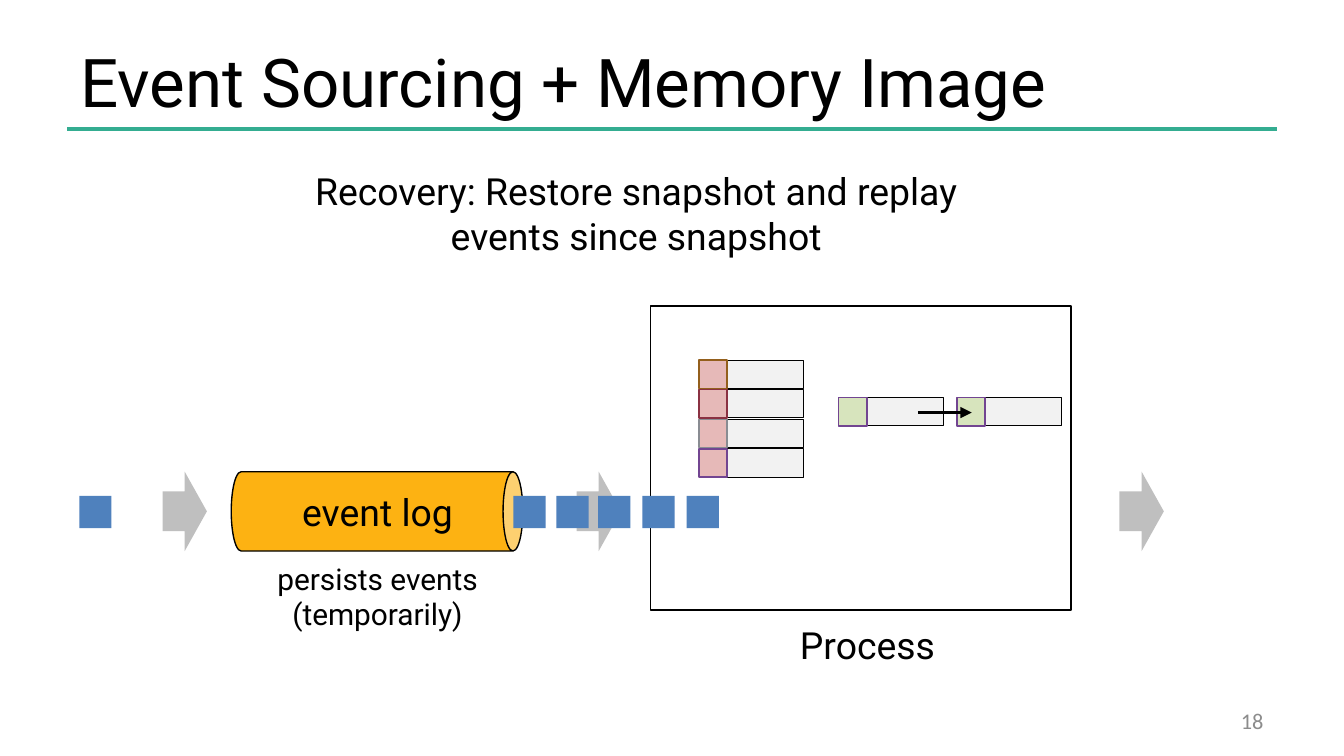
from pptx import Presentation
from pptx import util as u
from pptx.dml.color import RGBColor
from pptx.enum import shapes, text
from pptx.oxml.ns import qn
from lxml import etree

PX = 9144
BLACK = RGBColor(0x00, 0x00, 0x00)
GREEN = RGBColor(0x34, 0xAD, 0x91)
GREY = RGBColor(0x8C, 0x8C, 0x8C)
SILVER = RGBColor(0xBF, 0xBF, 0xBF)
ORANGE = RGBColor(0xFD, 0xB2, 0x12)
BLUE = RGBColor(0x4F, 0x81, 0xBD)
PALE = RGBColor(0xF2, 0xF2, 0xF2)
PINK = RGBColor(0xE6, 0xB9, 0xB8)
LIME = RGBColor(0xD7, 0xE4, 0xBD)
BROWN = RGBColor(0x93, 0x5F, 0x1C)
WINE = RGBColor(0x8A, 0x31, 0x42)
STEEL = RGBColor(0x89, 0x8C, 0x92)
PURPLE = RGBColor(0x72, 0x45, 0x91)

KIND = shapes.MSO_SHAPE
ALIGN = text.PP_ALIGN

prs = Presentation()
prs.slide_width = 1000 * PX
prs.slide_height = prs.slide_width * 9 // 16
slide = prs.slides.add_slide(prs.slide_layouts[6])


def add_part(kind, box, fill=None, edge=None, weight=0):
    part = slide.shapes.add_shape(kind, *(v * PX for v in box))
    part.shadow.inherit = False
    if fill is None:
        part.fill.background()
    else:
        part.fill.solid()
        part.fill.fore_color.rgb = fill
    if edge is None:
        part.line.fill.background()
    else:
        part.line.color.rgb = edge
        part.line.width = u.Pt(weight)
    return part


def add_line(start, end, color):
    line = slide.shapes.add_connector(
        shapes.MSO_CONNECTOR.STRAIGHT, *(v * PX for v in start + end))
    line.line.color.rgb = color
    line.line.width = u.Pt(2)
    etree.SubElement(line._element.spPr, qn("a:effectLst"))
    return line


add_line((50, 96), (950, 96), GREEN)

event_log = add_part(KIND.CAN, (251, 272, 59, 217), ORANGE, BLACK, 0.75)
event_log.rotation = 90

for left in (121, 429, 833):
    add_part(KIND.RIGHT_ARROW, (left, 351, 33, 59), SILVER)

add_part(KIND.RECTANGLE, (484, 228, 313, 226), None, BLACK, 1)

entries = [(520, 268 + 22 * row, PINK, edge)
           for row, edge in enumerate((BROWN, WINE, STEEL, PURPLE))]
entries += [(left, 296, LIME, PURPLE) for left in (624, 712)]
for left, top, fill, edge in entries:
    add_part(KIND.RECTANGLE, (left + 21, top, 57, 21), PALE, BLACK, 0.5)
    add_part(KIND.RECTANGLE, (left, top, 21, 21), fill, edge, 0.75)

link = add_line((683, 307), (723, 307), BLACK)
etree.SubElement(link.line._get_or_add_ln(), qn("a:tailEnd"), type="triangle")

for left in (59, 382, 414, 445, 478, 511):
    add_part(KIND.RECTANGLE, (left, 369, 24, 24), BLUE)

MIDDLE, TOP = text.MSO_ANCHOR.MIDDLE, text.MSO_ANCHOR.TOP
labels = [
    (["Event Sourcing + Memory Image"], (50, 23, 818, 74), MIDDLE, ALIGN.LEFT, 36, "Roboto", BLACK),
    (["18"], (717, 521, 233, 30), MIDDLE, ALIGN.RIGHT, 12, "Calibri", GREY),
    (["Recovery: Restore snapshot and replay events since snapshot"],
     (183, 120, 581, 77), TOP, ALIGN.CENTER, 20, "Roboto", BLACK),
    (["event log"], (186, 359, 190, 44), TOP, ALIGN.CENTER, 20, "Roboto", BLACK),
    (["persists events", "(temporarily)"], (168, 412, 226, 64), TOP, ALIGN.CENTER, 16, "Roboto", BLACK),
    (["Process"], (582, 458, 127, 44), TOP, ALIGN.CENTER, 20, "Roboto", BLACK),
]
for lines, box, anchor, align, size, face, color in labels:
    frame = slide.shapes.add_textbox(*(v * PX for v in box)).text_frame
    for name, value in {"word_wrap": True, "vertical_anchor": anchor, "text": "\n".join(lines)}.items():
        setattr(frame, name, value)
    for paragraph in frame.paragraphs:
        paragraph.alignment = align
        for name, value in {"size": u.Pt(size), "name": face}.items():
            setattr(paragraph.font, name, value)
        paragraph.font.color.rgb = color

prs.save("out.pptx")
